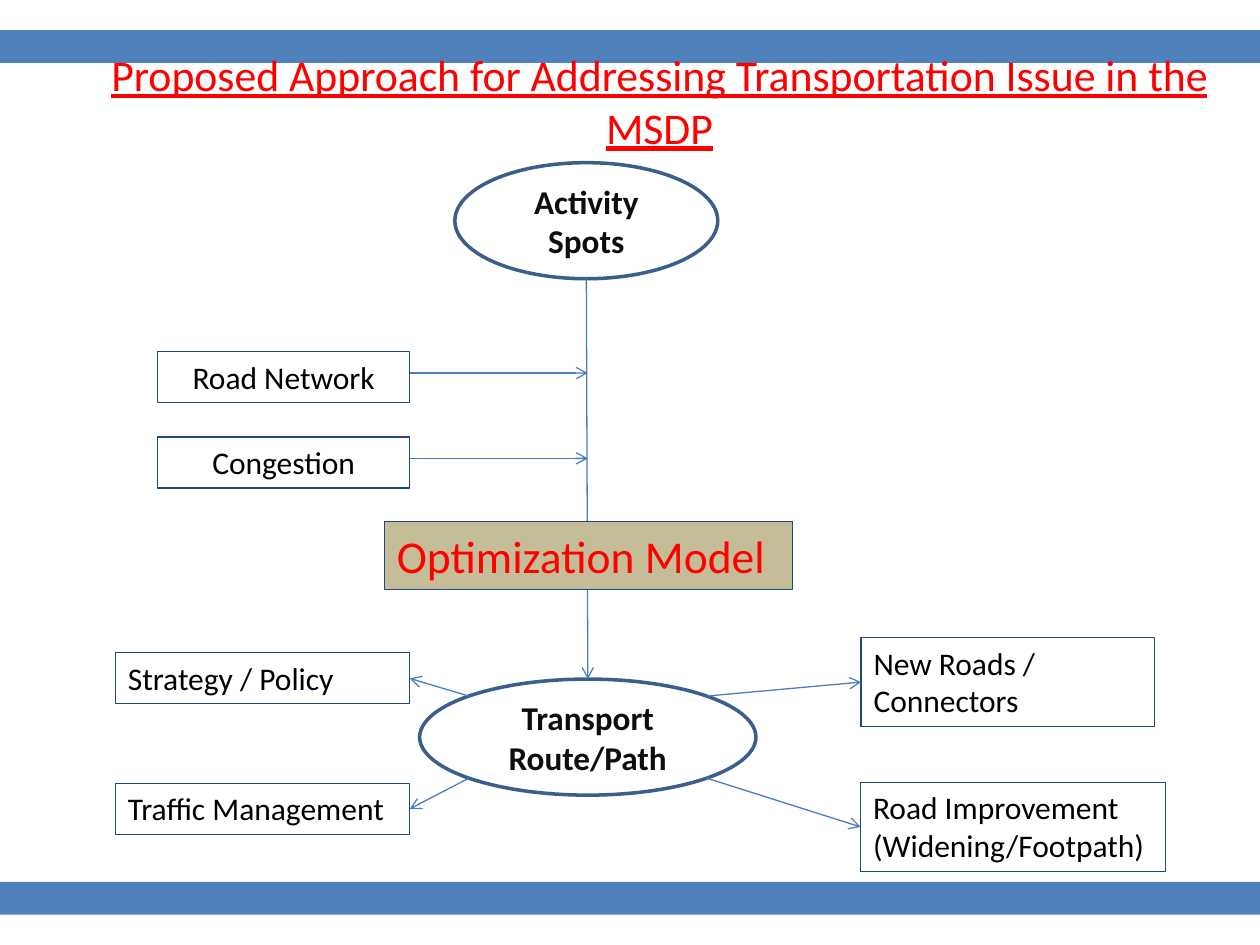
import math
import pptx
import pptx.util
import pptx.dml.color
import pptx.enum.shapes
import pptx.enum.text
import pptx.oxml
import pptx.oxml.ns

Cm, Pt = pptx.util.Cm, pptx.util.Pt
Kind = pptx.enum.shapes.MSO_SHAPE
Align = pptx.enum.text.PP_ALIGN
Fit = pptx.enum.text.MSO_AUTO_SIZE
Anchor = pptx.enum.text.MSO_ANCHOR

BLUE, NAVY, EDGE, WIRE = "4F81BD", "1F497D", "3A5F8C", "4B7EBC"
RED, BLACK, INK, TAN = "FF0000", "000000", "0D0D0D", "C4BD97"
LEFT, TOP, RIGHT = 1, 0, 3  # rectangle sides; the top also fits an ellipse

# Places are left, top, width, height in cm
TITLE = ("Proposed Approach for Addressing Transportation Issue in the MSDP",
         (1.27, 0.84, 24.05, 2.39))
BARS = [0.61, 17.78]
SPOTS = ("Activity Spots", (9.17, 3.28, 5.3, 2.34))
ROUTE = ("Transport Route/Path", (8.46, 13.69, 6.78, 2.34))
MODEL = ("Optimization Model ", (7.75, 10.51, 8.23, 1.37))
INPUTS = [
    ("Road Network", (3.18, 7.09, 5.08, 1.03)),
    ("Congestion", (3.18, 8.81, 5.08, 1.03)),
]
# Text, place, side joined, direction from the route's centre
OUTPUTS = [
    ("New Roads / Connectors", (17.36, 12.85, 5.92, 1.8), LEFT, (1, -1)),
    ("Road Improvement (Widening/Footpath)", (17.35, 15.77, 6.15, 1.8),
     LEFT, (1, 1)),
    ("Strategy / Policy", (2.33, 13.16, 5.93, 1.03), RIGHT, (-1, -1)),
    ("Traffic Management", (2.33, 15.79, 5.93, 1.03), RIGHT, (-1, 1)),
]

deck = pptx.Presentation()
deck.slide_width, deck.slide_height = Cm(25.4), Cm(19.05)
slide = deck.slides.add_slide(deck.slide_layouts[6])
shapes = slide.shapes


def color(code):
    return pptx.dml.color.RGBColor.from_string(code)


def write(shape, text, size=18, ink=BLACK, bold=False, under=False,
          align=Align.LEFT, anchor=Anchor.TOP, fit=Fit.SHAPE_TO_FIT_TEXT):
    frame = shape.text_frame
    frame.word_wrap = True
    frame.auto_size = fit
    frame.vertical_anchor = anchor
    para = frame.paragraphs[0]
    para.alignment = align
    run = para.add_run()
    run.text = text
    font = run.font
    font.name, font.size = "Calibri", Pt(size)
    font.bold, font.underline = bold, under
    font.color.rgb = color(ink)


def draw(kind, place, fill=None, edge=None, width=0.75):
    shape = shapes.add_shape(kind, *map(Cm, place))
    shape.shadow.inherit = False
    if fill:
        shape.fill.solid()
        shape.fill.fore_color.rgb = color(fill)
    else:
        shape.fill.background()
    if edge:
        shape.line.color.rgb = color(edge)
        shape.line.width = Pt(width)
    else:
        shape.line.fill.background()
    return shape


def box(text, place, fill=None, **style):
    shape = draw(Kind.RECTANGLE, place, fill, NAVY)
    write(shape, text, **style)
    return shape


def oval(text, place):
    shape = draw(Kind.OVAL, place, edge=EDGE, width=2)
    write(shape, text, size=19, ink=INK, bold=True, align=Align.CENTER,
          anchor=Anchor.MIDDLE, fit=Fit.NONE)
    return shape


def arrow(start, end, goal=None, side=None):
    """Draw an arrow, joined at its head to a side of goal if given."""
    line = shapes.add_connector(pptx.enum.shapes.MSO_CONNECTOR.STRAIGHT,
                                *map(Cm, start + end))
    if goal is not None:
        line.end_connect(goal, side)
    line.line.color.rgb = color(WIRE)
    line.line.width = Pt(0.75)
    head = pptx.oxml.parse_xml(
        '<a:tailEnd %s type="arrow"/>' % pptx.oxml.ns.nsdecls("a"))
    line.line._get_or_add_ln().append(head)
    line._element.spPr.append(pptx.oxml.parse_xml(
        "<a:effectLst %s/>" % pptx.oxml.ns.nsdecls("a")))


def mid(place):
    left, top, width, height = place
    return left + width / 2, top + height / 2


for top in BARS:
    draw(Kind.RECTANGLE, (0, top, 25.4, 0.66), BLUE)

oval(*SPOTS)
route = oval(*ROUTE)
x, y = mid(ROUTE[1])
spot = SPOTS[1]
arrow((mid(spot)[0], spot[1] + spot[3]), (x, ROUTE[1][1]), route, TOP)

for text, place in INPUTS:
    box(text, place, align=Align.CENTER)
    level = place[1] + 0.43
    arrow((place[0] + place[2], level), (x, level))

reach = math.sqrt(0.5)
for text, place, side, (across, down) in OUTPUTS:
    goal = box(text, place)
    start = (x + across * reach * ROUTE[1][2] / 2,
             y + down * reach * ROUTE[1][3] / 2)
    arrow(start, mid(place), goal, side)

box(*MODEL, fill=TAN, size=26, ink=RED)
title = shapes.add_textbox(*map(Cm, TITLE[1]))
write(title, TITLE[0], size=25, ink=RED, under=True, align=Align.CENTER)

deck.save("out.pptx")
